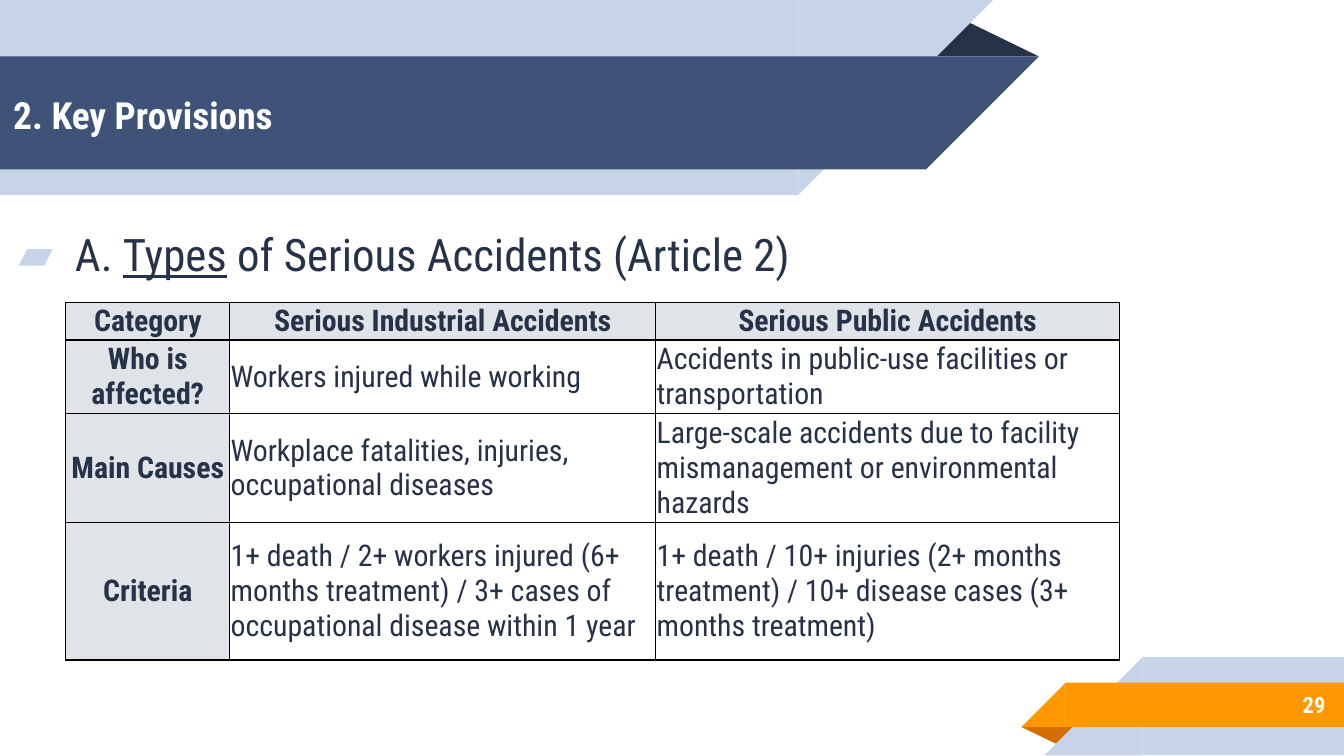
from dataclasses import dataclass

from lxml.etree import SubElement
from pptx import Presentation
from pptx.dml.color import RGBColor
from pptx.enum.shapes import MSO_SHAPE as Preset
from pptx.enum.text import MSO_ANCHOR as Anchor, PP_ALIGN as Align
from pptx.oxml.ns import qn
from pptx.util import Inches, Pt


@dataclass(frozen=True)
class Theme:
    """Colours, font and type sizes of the deck."""
    font: str = "Roboto Condensed"
    white: str = "FFFFFF"
    pale: str = "C7D3E6"
    blue: str = "3F5378"
    navy: str = "263248"
    orange: str = "FF9800"
    rust: str = "D26F00"
    header: str = "E0E4E9"
    border: str = "000000"
    title: int = 20
    body: int = 24
    cell: int = 16
    number: int = 12


THEME = Theme()
ROWS = [
    ["Category", "Serious Industrial Accidents", "Serious Public Accidents"],
    ["Who is affected?", "Workers injured while working",
     "Accidents in public-use facilities or transportation"],
    ["Main Causes", "Workplace fatalities, injuries, occupational diseases",
     "Large-scale accidents due to facility mismanagement or environmental hazards"],
    ["Criteria",
     "1+ death / 2+ workers injured (6+ months treatment) / 3+ cases of "
     "occupational disease within 1 year",
     "1+ death / 10+ injuries (2+ months treatment) / 10+ disease cases "
     "(3+ months treatment)"],
]


def write_text(frame, runs, size, color, bold=False, align=Align.LEFT):
    """Fill a text frame with (text, underlined) runs and return the paragraph."""
    frame.word_wrap = True
    paragraph = frame.paragraphs[0]
    paragraph.alignment = align
    for text, underlined in runs:
        run = paragraph.add_run()
        run.text = text
        run.font.name = THEME.font
        run.font.size = Pt(size)
        run.font.bold = bold
        run.font.underline = underlined
        run.font.color.rgb = RGBColor.from_string(color)
    return paragraph


def add_text_box(slide, box, runs, size, color, bottom=0.1, **style):
    """Add a vertically centred text box and return its paragraph."""
    frame = slide.shapes.add_textbox(*map(Inches, box)).text_frame
    frame.vertical_anchor = Anchor.MIDDLE
    frame.margin_left = frame.margin_right = frame.margin_top = Inches(0.1)
    frame.margin_bottom = Inches(bottom)
    return write_text(frame, runs, size, color, **style)


def add_block(slide, preset, box, color, rotation=0):
    """Add a flat filled shape without outline or shadow."""
    shape = slide.shapes.add_shape(preset, *map(Inches, box))
    shape.shadow.inherit = False
    shape.fill.solid()
    shape.fill.fore_color.rgb = RGBColor.from_string(color)
    shape.line.fill.background()
    shape.rotation = rotation
    return shape


def add_fold(slide, box, color, rotation=0):
    """Add the shaded triangle behind a folded ribbon."""
    add_block(slide, Preset.ISOSCELES_TRIANGLE, box, color, rotation).adjustments[0] = 0.324


def add_band(slide, box, color, tip_on_left=False):
    """Add a bar whose square end is cut at 45 degrees within the box."""
    left, top, width, height = box
    bar_left = left + height if tip_on_left else left
    tip_left = left if tip_on_left else left + width - height
    add_block(slide, Preset.RECTANGLE, (bar_left, top, width - height, height), color)
    add_block(slide, Preset.RIGHT_TRIANGLE, (tip_left, top, height, height), color,
              270 if tip_on_left else 90)


def add_header(slide, left, top, width, height):
    """Draw the title ribbon with its title."""
    add_fold(slide, (left + width - 0.85, top + 0.14, 0.85, 0.28), THEME.navy)
    add_band(slide, (left, top, width - 0.34, height), THEME.pale)
    add_band(slide, (left, top + 0.42, width, 0.84), THEME.blue)
    add_text_box(slide, (left, top + 0.43, width - 0.45, 0.84),
                 [("2. Key Provisions", False)], THEME.title, THEME.white, bold=True)


def add_footer(slide, left, top, width, height):
    """Draw the corner ribbon with the slide number."""
    add_fold(slide, (left, top + 0.52, 0.43, 0.14), THEME.rust, 180)
    add_band(slide, (left + 0.17, top, width - 0.17, height), THEME.pale, tip_on_left=True)
    add_band(slide, (left, top + 0.19, width, 0.33), THEME.orange, tip_on_left=True)
    add_text_box(slide, (left + 0.73, top + 0.18, 1.63, 0.35), [("29", False)],
                 THEME.number, THEME.white, bold=True, align=Align.RIGHT)


def add_heading(slide, left, top, width, height):
    """Write the bulleted section heading."""
    runs = [("A. ", False), ("Types", True), (" of Serious Accidents (Article 2)", False)]
    paragraph = add_text_box(slide, (left, top, width, height), runs,
                             THEME.body, THEME.navy, bottom=0.48)
    paragraph.space_before = Pt(6)
    properties = paragraph._p.get_or_add_pPr()
    properties.set("marL", str(Inches(0.5)))
    properties.set("indent", str(Inches(-0.42)))
    bullet_color = SubElement(properties, qn("a:buClr"))
    SubElement(bullet_color, qn("a:srgbClr"), val=THEME.pale)
    SubElement(properties, qn("a:buFont"), typeface=THEME.font)
    SubElement(properties, qn("a:buChar"), char="▰")


def add_cell_borders(cell):
    """Outline all four sides of a table cell."""
    properties = cell._tc.get_or_add_tcPr()
    for side in ("lnL", "lnR", "lnT", "lnB"):
        line = SubElement(properties, qn(f"a:{side}"), w=str(Pt(0.75)))
        fill = SubElement(line, qn("a:solidFill"))
        SubElement(fill, qn("a:srgbClr"), val=THEME.border)


def add_accident_table(slide, left, top, height, column_widths, row_heights):
    """Build the table that compares the two types of accident."""
    box = map(Inches, (left, top, sum(column_widths), height))
    graphic_frame = slide.shapes.add_table(len(row_heights), len(column_widths), *box)
    table = graphic_frame.table
    table.first_row = table.horz_banding = False
    for column, column_width in zip(table.columns, column_widths):
        column.width = Inches(column_width)
    for row_index, (row, row_height) in enumerate(zip(table.rows, row_heights)):
        row.height = Inches(row_height)
        for column_index, cell in enumerate(row.cells):
            is_header = row_index == 0 or column_index == 0
            cell.vertical_anchor = Anchor.MIDDLE
            cell.margin_left = cell.margin_right = Pt(0.5)
            cell.margin_top = cell.margin_bottom = Pt(0.5)
            add_cell_borders(cell)
            if is_header:
                cell.fill.solid()
                cell.fill.fore_color.rgb = RGBColor.from_string(THEME.header)
            else:
                cell.fill.background()
            paragraph = write_text(
                cell.text_frame, [(ROWS[row_index][column_index], False)],
                THEME.cell, THEME.navy, bold=is_header,
                align=Align.CENTER if is_header else Align.LEFT)
            paragraph.space_after = Pt(8)
    graphic_frame.height = Inches(height)


def main():
    """Build and save the slide."""
    presentation = Presentation()
    presentation.slide_width = Inches(10)
    presentation.slide_height = presentation.slide_width * 9 // 16
    slide = presentation.slides.add_slide(presentation.slide_layouts[6])
    add_footer(slide, 7.6, 4.89, 2.4, 0.73)
    add_header(slide, 0, 0, 7.73, 1.45)
    add_heading(slide, -0.04, -0.07, 10, 4.3)
    add_accident_table(slide, 0.49, 2.25, 2.68, [1.22, 3.17, 3.45],
                       [0.22, 0.42, 0.78, 1.02])
    presentation.save("out.pptx")


if __name__ == "__main__":
    main()
